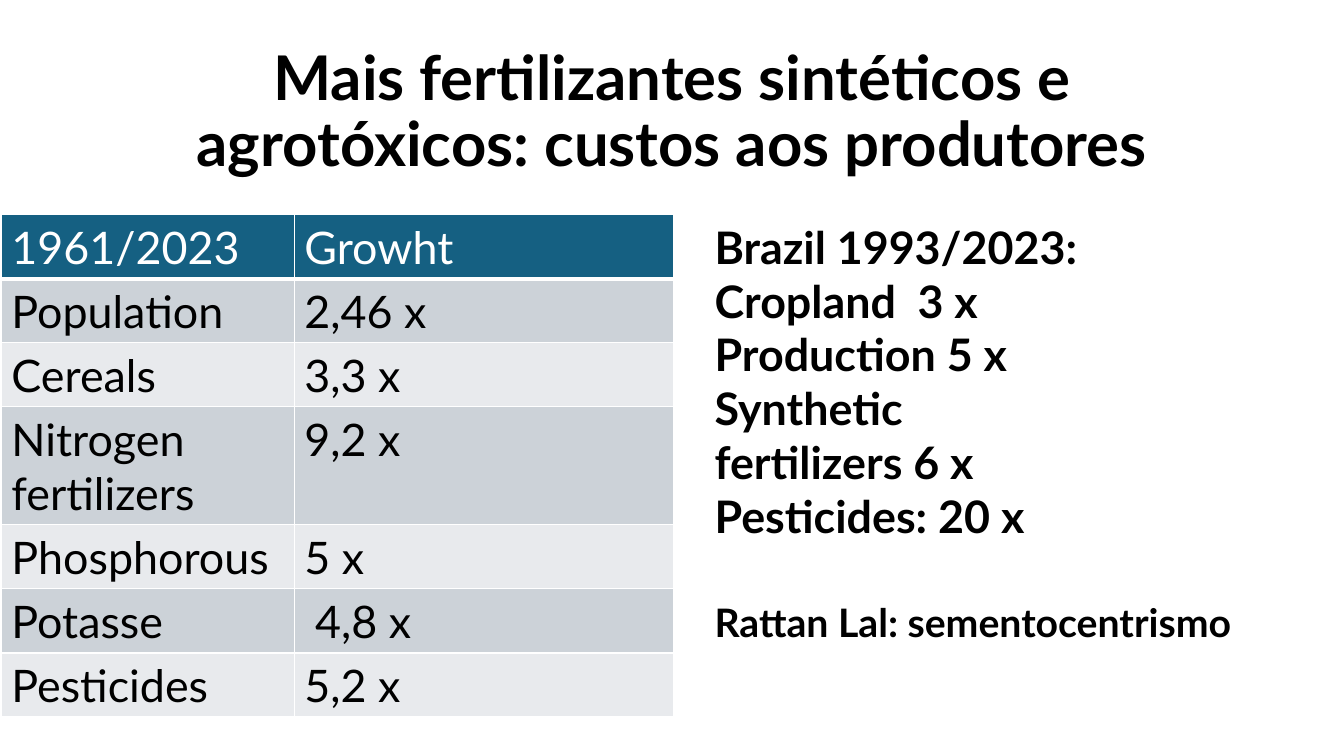
from dataclasses import dataclass

from lxml import etree
from pptx import Presentation
from pptx.dml.color import RGBColor
from pptx.enum.text import MSO_ANCHOR, MSO_AUTO_SIZE, PP_ALIGN
from pptx.oxml.ns import qn
from pptx.util import Inches, Pt

CENTER = PP_ALIGN.CENTER
MIDDLE = MSO_ANCHOR.MIDDLE
GROW = MSO_AUTO_SIZE.SHAPE_TO_FIT_TEXT
NO_FIT = MSO_AUTO_SIZE.NONE
TITLE_ONLY = 5
COLUMNS, ROWS = 100, 75


@dataclass(frozen=True)
class Theme:
    font: str = "Lato"
    ink: str = "000000"
    paper: str = "FFFFFF"
    header: str = "156082"
    bands: tuple = ("CCD2D8", "E8EAED")
    title_size: int = 44
    body_size: int = 32
    note_size: int = 28
    rule: int = 1
    header_rule: int = 3


class SlideBuilder:
    def __init__(self, deck, theme):
        self.theme = theme
        self.column = deck.slide_width / COLUMNS
        self.row = deck.slide_height / ROWS
        self.slide = deck.slides.add_slide(deck.slide_layouts[TITLE_ONLY])
        background = self.slide.background.fill
        background.solid()
        background.fore_color.rgb = RGBColor.from_string(theme.paper)

    def place(self, left, top, width, height):
        return (round(left * self.column), round(top * self.row),
                round(width * self.column), round(height * self.row))

    def add_wording(self, paragraph, wording, size, color, bold=False):
        run = paragraph.add_run()
        run.text = wording
        run.font.name = self.theme.font
        run.font.size = Pt(size)
        run.font.bold = bold
        run.font.color.rgb = RGBColor.from_string(color)

    def title(self, wording, area):
        heading = self.slide.shapes.title
        heading.left, heading.top, heading.width, heading.height = self.place(*area)
        frame = heading.text_frame
        frame.auto_size = NO_FIT
        frame.vertical_anchor = MIDDLE
        paragraph = frame.paragraphs[0]
        paragraph.alignment = CENTER
        paragraph.line_spacing = 0.9
        self.add_wording(paragraph, wording, self.theme.title_size, self.theme.ink, True)

    def text(self, lines, area, size, wrap=True, tab=None):
        frame = self.slide.shapes.add_textbox(*self.place(*area)).text_frame
        frame.word_wrap = wrap
        frame.auto_size = GROW
        for index, line in enumerate(lines):
            paragraph = frame.add_paragraph() if index else frame.paragraphs[0]
            if "\t" in line:
                self.tab_stop(paragraph, tab)
            self.add_wording(paragraph, line, size, self.theme.ink, True)

    def tab_stop(self, paragraph, column):
        properties = paragraph._p.get_or_add_pPr()
        stops = etree.SubElement(properties, qn("a:tabLst"))
        etree.SubElement(stops, qn("a:tab"), pos=str(round(column * self.column)), algn="l")

    def borders(self, cell, bottom):
        properties = cell._tc.get_or_add_tcPr()
        rule = self.theme.rule
        for side, width in (("L", rule), ("R", rule), ("T", rule), ("B", bottom)):
            line = etree.SubElement(properties, qn(f"a:ln{side}"), w=str(Pt(width)))
            fill = etree.SubElement(line, qn("a:solidFill"))
            etree.SubElement(fill, qn("a:srgbClr"), val=self.theme.paper)

    def table(self, records, origin, widths, heights, indents):
        theme = self.theme
        area = self.place(*origin, sum(widths), sum(heights))
        table = self.slide.shapes.add_table(len(records), len(widths), *area).table
        for column, width in zip(table.columns, widths):
            column.width = round(width * self.column)
        for r, (record, height) in enumerate(zip(records, heights)):
            table.rows[r].height = round(height * self.row)
            fill = theme.bands[(r - 1) % 2] if r else theme.header
            color = theme.ink if r else theme.paper
            for c, wording in enumerate(record):
                cell = table.cell(r, c)
                self.borders(cell, theme.rule if r else theme.header_rule)
                cell.fill.solid()
                cell.fill.fore_color.rgb = RGBColor.from_string(fill)
                if (r, c) in indents:
                    cell.margin_left = round(indents[r, c] * self.column)
                self.add_wording(cell.text_frame.paragraphs[0], wording, theme.body_size, color)


def main():
    deck = Presentation()
    deck.slide_width, deck.slide_height = Inches(13.33), Inches(7.5)
    theme = Theme()
    builder = SlideBuilder(deck, theme)
    builder.title("Mais fertilizantes sintéticos e agrotóxicos: custos aos produtores",
                  (6.9, 4, 86.25, 14.5))

    growth = [
        ("1961/2023", "Growht"),
        ("Population", "2,46 x"),
        ("Cereals", "3,3 x"),
        ("Nitrogen fertilizers", "9,2 x"),
        ("Phosphorous", "5 x"),
        ("Potasse", "4,8 x"),
        ("Pesticides", "5,2 x"),
    ]
    single, double = 6.34, 11.7
    heights = [double if name == "Nitrogen fertilizers" else single for name, _ in growth]
    content_top, brazil_left = 21.3, 52.43
    builder.table(growth, (0.1, content_top), (21.8, 28.25), heights, {(5, 1): 1.55})

    brazil = ["Brazil 1993/2023:", "Cropland\t3 x", "Production 5 x",
              "Synthetic fertilizers 6 x", "Pesticides: 20 x"]
    builder.text(brazil, (brazil_left, content_top, 29.8, 36.4), theme.body_size, tab=15.1)
    builder.text(["Rattan Lal: sementocentrismo"], (brazil_left, 58.9, 42.25, 5.7),
                 theme.note_size, wrap=False)
    deck.save("out.pptx")


if __name__ == "__main__":
    main()
